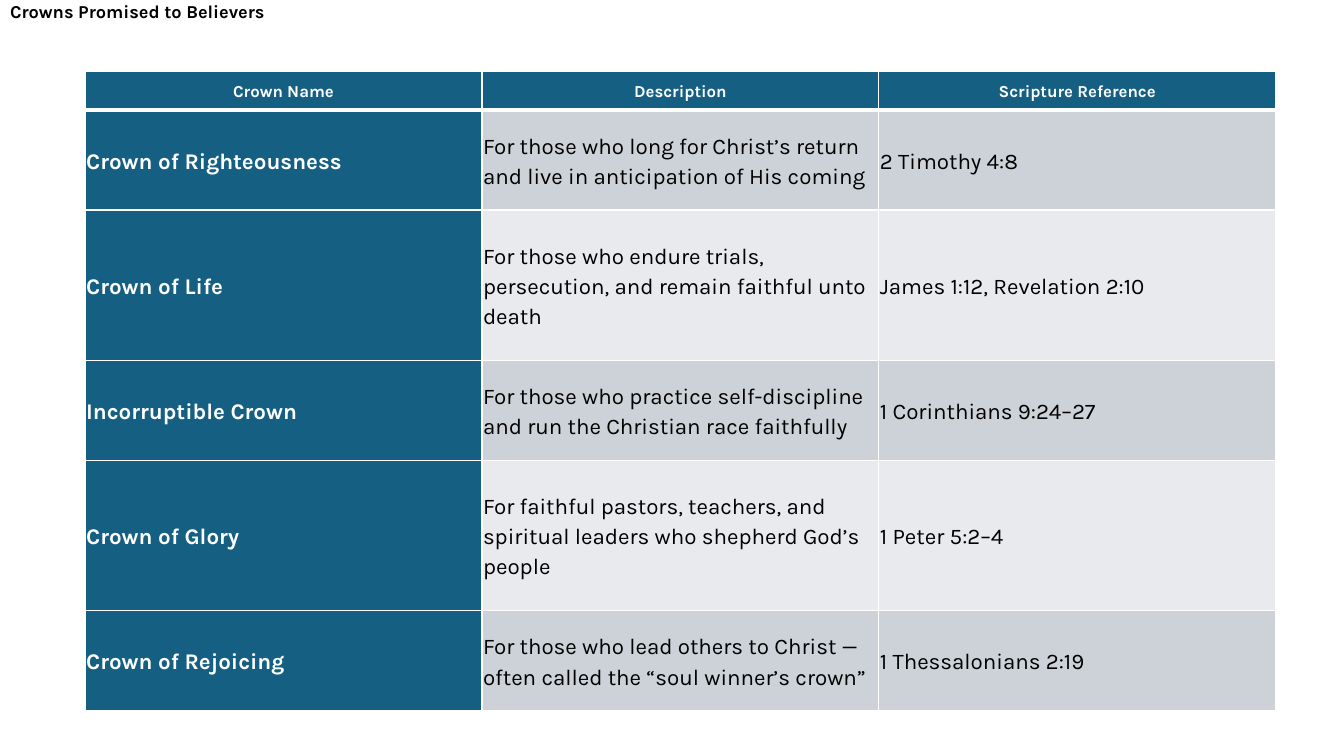
from lxml.etree import SubElement
from pptx import Presentation
from pptx.dml.color import RGBColor
from pptx.enum.text import MSO_ANCHOR, PP_ALIGN
from pptx.oxml.ns import qn
from pptx.util import Pt

FONT = "Karla"
WHITE, BLACK, TEAL = "FFFFFF", "000000", "156082"
BANDS = ["CCD2D8", "E8EAED"]
HEADINGS = ["Crown Name", "Description", "Scripture Reference"]
CROWNS = [
    ("Crown of Righteousness",
     "For those who long for Christ’s return and live in anticipation of His coming",
     "2 Timothy 4:8"),
    ("Crown of Life",
     "For those who endure trials, persecution, and remain faithful unto death",
     "James 1:12, Revelation 2:10"),
    ("Incorruptible Crown",
     "For those who practice self-discipline and run the Christian race faithfully",
     "1 Corinthians 9:24–27"),
    ("Crown of Glory",
     "For faithful pastors, teachers, and spiritual leaders who shepherd God’s people",
     "1 Peter 5:2–4"),
    ("Crown of Rejoicing",
     "For those who lead others to Christ — often called the “soul winner’s crown”",
     "1 Thessalonians 2:19"),
]
HEADING_HEIGHT = 27.4
CROWN_HEIGHTS = [71.5, 107.3]  # two-line and three-line descriptions alternate


def color(value):
    return RGBColor.from_string(value)


def set_font(paragraph, size, ink, bold):
    font = paragraph.font
    font.name, font.size, font.bold = FONT, Pt(size), bold
    font.color.rgb = color(ink)


def set_borders(cell, top, bottom):
    """Draw white cell borders; these must precede the fill in the cell XML."""
    properties = cell._tc.get_or_add_tcPr()
    sides = [("a:lnL", 1), ("a:lnR", 1), ("a:lnT", top), ("a:lnB", bottom)]
    for side, width in sides:
        line = SubElement(properties, qn(side), w=str(Pt(width)))
        fill = SubElement(line, qn("a:solidFill"))
        SubElement(fill, qn("a:srgbClr"), val=WHITE)


def add_heading(slide, left, top, width, height):
    heading = slide.shapes.title
    heading.left, heading.top = Pt(left), Pt(top)
    heading.width, heading.height = Pt(width), Pt(height)
    frame = heading.text_frame
    frame.text = "Crowns Promised to Believers"
    frame.word_wrap = False
    frame.vertical_anchor = MSO_ANCHOR.TOP
    frame.margin_top = frame.margin_bottom = 0
    paragraph = frame.paragraphs[0]
    paragraph.alignment = PP_ALIGN.LEFT
    set_font(paragraph, 13, BLACK, True)


def fill_cell(cell, text, row, column):
    is_heading = row == 0
    on_teal = is_heading or column == 0
    # Borders, with a thick rule under the headings
    set_borders(cell, 3 if row == 1 else 1, 3 if is_heading else 1)
    cell.fill.solid()
    cell.fill.fore_color.rgb = color(TEAL if on_teal else BANDS[(row - 1) % 2])
    # Text
    cell.margin_left = cell.margin_right = Pt(0.75)
    cell.margin_top = cell.margin_bottom = Pt(0.75)
    cell.vertical_anchor = MSO_ANCHOR.MIDDLE
    cell.text = text
    paragraph = cell.text_frame.paragraphs[0]
    paragraph.alignment = PP_ALIGN.CENTER if is_heading else PP_ALIGN.LEFT
    paragraph.line_spacing = 1.15
    paragraph.space_after = Pt(8)
    set_font(paragraph, 12 if is_heading else 16, WHITE if on_teal else BLACK, on_teal)


def add_crown_table(slide, left, top, width, height):
    rows = [HEADINGS, *CROWNS]
    crowns = slide.shapes.add_table(
        len(rows), len(HEADINGS), Pt(left), Pt(top), Pt(width), Pt(height)).table
    for column in crowns.columns:
        column.width = Pt(width / len(HEADINGS))
    for r, texts in enumerate(rows):
        crowns.rows[r].height = Pt(CROWN_HEIGHTS[(r - 1) % 2] if r else HEADING_HEIGHT)
        for c, text in enumerate(texts):
            fill_cell(crowns.cell(r, c), text, r, c)


def main():
    deck = Presentation()
    deck.slide_width, deck.slide_height = Pt(960), Pt(540)
    slide = deck.slides.add_slide(deck.slide_layouts[5])
    add_heading(slide, 0, 0, 960, 36)
    add_crown_table(slide, 60.8, 51.2, 850.5, 456.5)
    deck.save("out.pptx")


if __name__ == "__main__":
    main()
